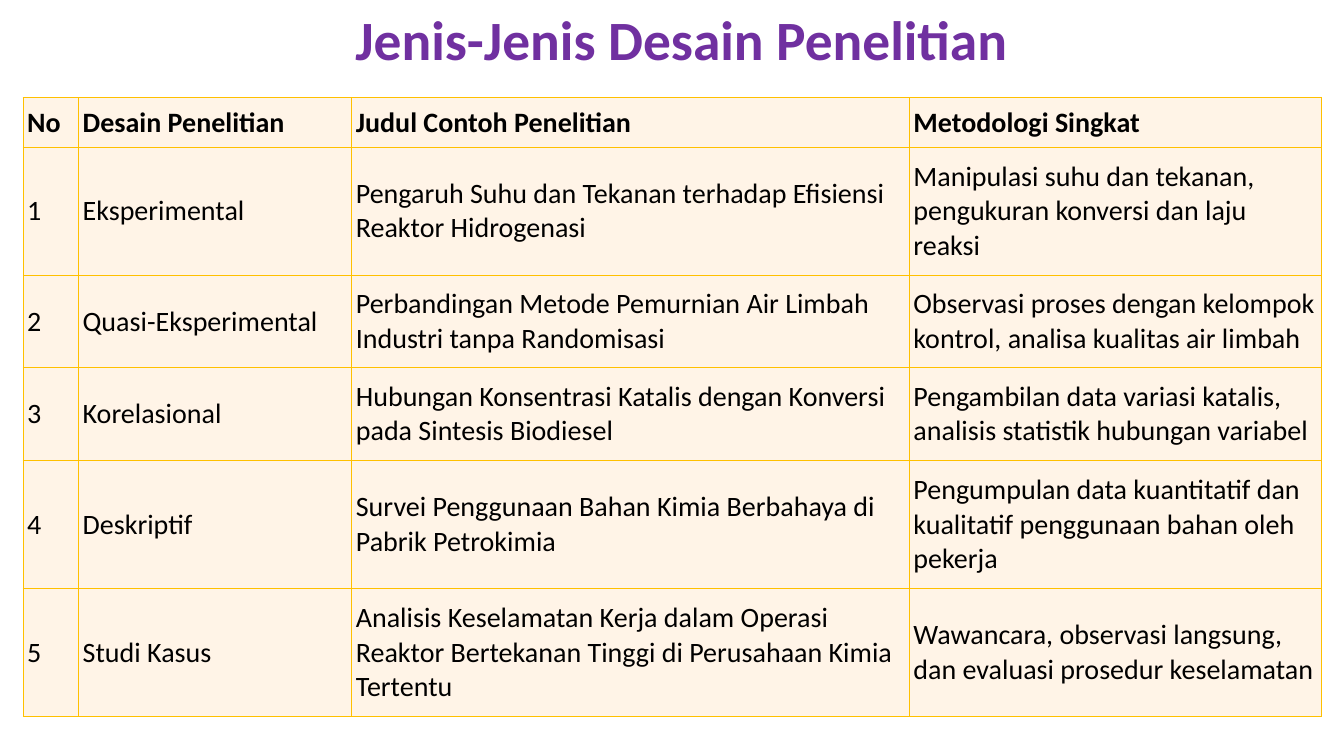
import pptx
import pptx.util
import pptx.dml.color
import pptx.enum.text
import lxml.etree
from pptx.oxml.ns import qn

Inches = pptx.util.Inches
Pt = pptx.util.Pt
RGBColor = pptx.dml.color.RGBColor
MIDDLE = pptx.enum.text.MSO_ANCHOR.MIDDLE
CENTER = pptx.enum.text.PP_ALIGN.CENTER

PURPLE = RGBColor(0x70, 0x30, 0xA0)
BLACK = RGBColor(0x00, 0x00, 0x00)
CREAM = RGBColor(0xFF, 0xF4, 0xE7)
GOLD = RGBColor(0xFF, 0xC0, 0x00)
FONT = "Calibri"

COLUMN_WIDTHS = [0.55, 2.71, 5.53, 4.09]
ROW_HEIGHTS = [0.49, 1.27, 0.92, 0.92, 1.27, 1.27]
HEADER = ["No", "Desain Penelitian", "Judul Contoh Penelitian", "Metodologi Singkat"]
DESIGNS = [
    ("Eksperimental",
     "Pengaruh Suhu dan Tekanan terhadap Efisiensi Reaktor Hidrogenasi",
     "Manipulasi suhu dan tekanan, pengukuran konversi dan laju reaksi"),
    ("Quasi-Eksperimental",
     "Perbandingan Metode Pemurnian Air Limbah Industri tanpa Randomisasi",
     "Observasi proses dengan kelompok kontrol, analisa kualitas air limbah"),
    ("Korelasional",
     "Hubungan Konsentrasi Katalis dengan Konversi pada Sintesis Biodiesel",
     "Pengambilan data variasi katalis, analisis statistik hubungan variabel"),
    ("Deskriptif",
     "Survei Penggunaan Bahan Kimia Berbahaya di Pabrik Petrokimia",
     "Pengumpulan data kuantitatif dan kualitatif penggunaan bahan oleh pekerja"),
    ("Studi Kasus",
     "Analisis Keselamatan Kerja dalam Operasi Reaktor Bertekanan Tinggi "
     "di Perusahaan Kimia Tertentu",
     "Wawancara, observasi langsung, dan evaluasi prosedur keselamatan"),
]


def add_run(p, text, size, color, bold):
    """Add one formatted run to a paragraph."""
    r = p.add_run()
    r.text = text
    r.font.name = FONT
    r.font.size = Pt(size)
    r.font.bold = bold
    r.font.color.rgb = color


def set_borders(cell):
    """Draw a thin gold line on all four sides of a cell."""
    tc_pr = cell._tc.get_or_add_tcPr()
    for i, side in enumerate(("a:lnL", "a:lnR", "a:lnT", "a:lnB")):
        ln = lxml.etree.Element(qn(side), w=str(Pt(1)))
        fill = lxml.etree.SubElement(ln, qn("a:solidFill"))
        lxml.etree.SubElement(fill, qn("a:srgbClr"), val=str(GOLD))
        tc_pr.insert(i, ln)


def add_title(s, left, top, width, height):
    """Place the centred slide title in the given box."""
    tf = s.shapes.add_textbox(Inches(left), Inches(top), Inches(width), Inches(height)).text_frame
    tf.word_wrap = True
    tf.vertical_anchor = MIDDLE
    p = tf.paragraphs[0]
    p.alignment = CENTER
    add_run(p, "Jenis-Jenis Desain Penelitian", 39.6, PURPLE, True)


def add_design_table(s, left, top):
    """Place the table of research designs with its corner at left, top."""
    rows = [HEADER] + [(str(n), *design) for n, design in enumerate(DESIGNS, 1)]
    table = s.shapes.add_table(
        len(rows), len(HEADER), Inches(left), Inches(top),
        Inches(sum(COLUMN_WIDTHS)), Inches(sum(ROW_HEIGHTS))).table
    for column, width in zip(table.columns, COLUMN_WIDTHS):
        column.width = Inches(width)
    for row, height in zip(table.rows, ROW_HEIGHTS):
        row.height = Inches(height)
    for i, texts in enumerate(rows):
        for j, text in enumerate(texts):
            cell = table.cell(i, j)
            cell.fill.solid()
            cell.fill.fore_color.rgb = CREAM
            cell.vertical_anchor = MIDDLE
            cell.margin_left = cell.margin_right = Inches(0.04)
            cell.margin_top = cell.margin_bottom = Inches(0.04)
            set_borders(cell)
            add_run(cell.text_frame.paragraphs[0], text, 20, BLACK, i == 0)


def main():
    """Build the slide and save it."""
    prs = pptx.Presentation()
    prs.slide_width = Inches(13.33)
    prs.slide_height = Inches(7.5)
    s = prs.slides.add_slide(prs.slide_layouts[6])
    add_title(s, 1.01, 0, 11.5, 0.76)
    add_design_table(s, 0.23, 0.97)
    prs.save("out.pptx")


if __name__ == "__main__":
    main()
